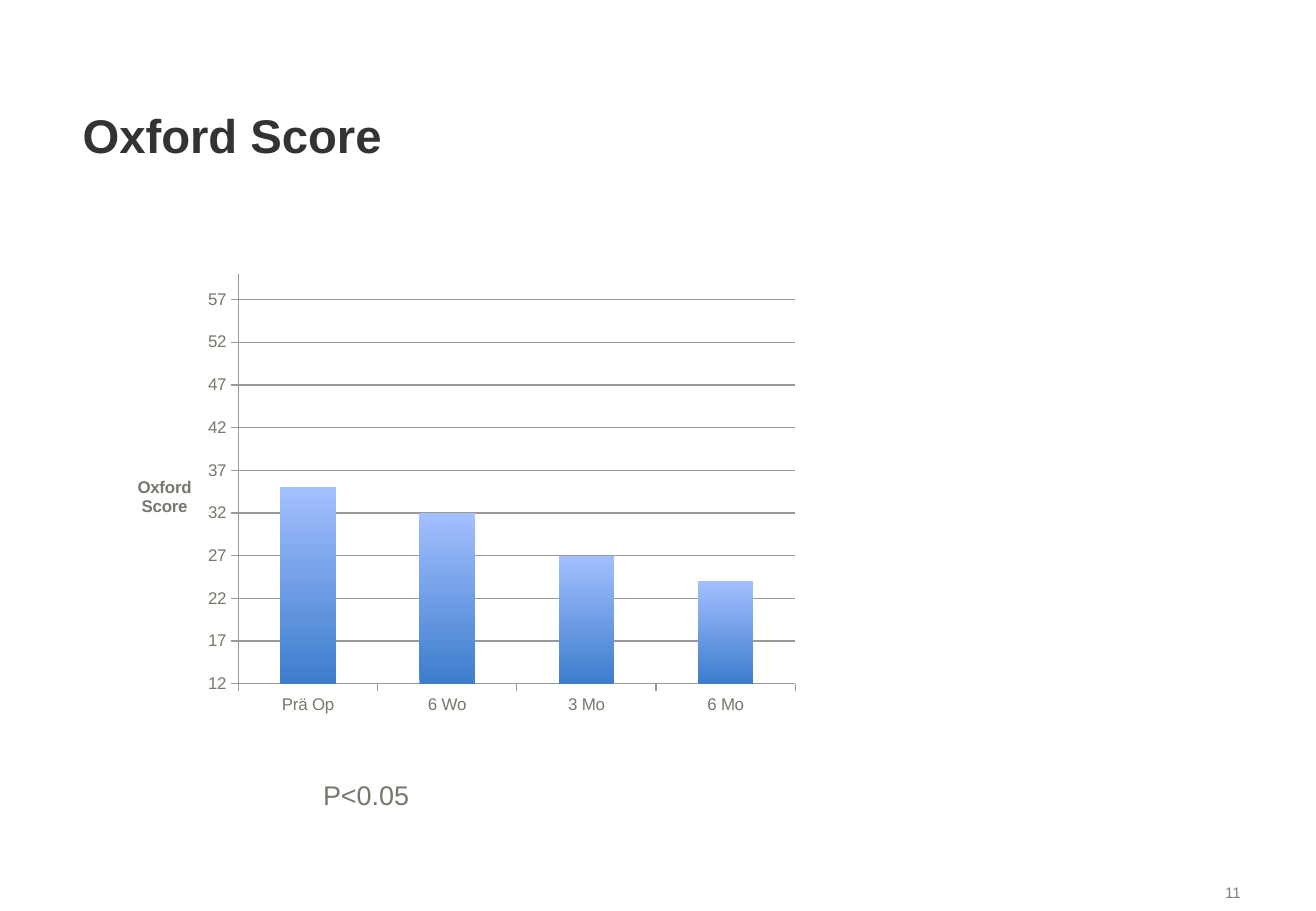
import dataclasses

import pptx
import pptx.chart.data
import pptx.dml.color
import pptx.enum.chart
import pptx.enum.text
import pptx.oxml
import pptx.oxml.ns
import pptx.util

Inches = pptx.util.Inches
Pt = pptx.util.Pt
ALIGN = pptx.enum.text.PP_ALIGN
ANCHOR = pptx.enum.text.MSO_ANCHOR


@dataclasses.dataclass(frozen=True)
class Theme:
    font: str = "Arial"
    heading: str = "333333"
    body: str = "75786A"
    number: str = "808080"
    line: str = "999999"
    bar_bottom: str = "3D7DCD"
    bar_top: str = "A3BFFF"
    title_size: int = 28
    note_size: int = 16
    chart_size: int = 10
    number_size: int = 9


THEME = Theme()


def rgb(value):
    return pptx.dml.color.RGBColor.from_string(value)


def style_font(font, size, color, bold=False):
    font.name = THEME.font
    font.size = Pt(size)
    font.bold = bold
    font.color.rgb = rgb(color)


def write_text(frame, text, *, size, color, bold=False, align=ALIGN.LEFT,
               anchor=ANCHOR.TOP, wrap=True):
    frame.word_wrap = wrap
    frame.vertical_anchor = anchor
    para = frame.paragraphs[0]
    para.alignment = align
    span = para.add_run()
    span.text = text
    style_font(span.font, size, color, bold)


def place(shape, left, top, width, height):
    shape.left, shape.top = Inches(left), Inches(top)
    shape.width, shape.height = Inches(width), Inches(height)


def add_text(page, text, area, **style):
    box = page.shapes.add_textbox(*map(Inches, area))
    write_text(box.text_frame, text, **style)
    return box


def set_layout(parent, position, target=None, **fractions):
    """Place a chart part by fractions of the chart area."""
    for old in parent.findall(pptx.oxml.ns.qn("c:layout")):
        parent.remove(old)
    inner = f'<c:layoutTarget val="{target}"/>' if target else ""
    inner += '<c:xMode val="edge"/><c:yMode val="edge"/>'
    inner += "".join(f'<c:{key} val="{value}"/>' for key, value in fractions.items())
    parent.insert(position, pptx.oxml.parse_xml(
        f'<c:layout {pptx.oxml.ns.nsdecls("c")}>'
        f"<c:manualLayout>{inner}</c:manualLayout></c:layout>"))


def style_axis(axis):
    axis.major_tick_mark = pptx.enum.chart.XL_TICK_MARK.OUTSIDE
    axis.minor_tick_mark = pptx.enum.chart.XL_TICK_MARK.NONE
    axis.format.line.color.rgb = rgb(THEME.line)
    axis.format.line.width = Pt(0.75)
    style_font(axis.tick_labels.font, THEME.chart_size, THEME.body)


def add_axis_title(axis, text):
    frame = axis.axis_title.text_frame
    frame.text = text
    for para in frame.paragraphs:
        para.alignment = ALIGN.CENTER
        for span in para.runs:
            style_font(span.font, THEME.chart_size, THEME.body, bold=True)
    title = axis.axis_title.element
    body = title.xpath(".//a:bodyPr")[0]
    body.set("rot", "0")
    body.set("vert", "horz")
    set_layout(title, 1, x=0.03, y=0.45)


def add_score_chart(page, area):
    scores = pptx.chart.data.CategoryChartData()
    scores.categories = ["Prä Op", "6 Wo", "3 Mo", "6 Mo"]
    scores.add_series("Series 1", [35, 32, 27, 24])
    chart = page.shapes.add_chart(
        pptx.enum.chart.XL_CHART_TYPE.COLUMN_CLUSTERED,
        *map(Inches, area), scores).chart
    chart.has_title = False
    chart.has_legend = False
    style_font(chart.font, THEME.chart_size, THEME.body)

    # Axes
    style_axis(chart.category_axis)
    values = chart.value_axis
    style_axis(values)
    values.minimum_scale, values.maximum_scale, values.major_unit = 12, 60, 5
    values.has_major_gridlines = True
    grid = values.major_gridlines.format.line
    grid.color.rgb = rgb(THEME.line)
    grid.width = Pt(0.75)
    add_axis_title(values, "Oxford\nScore")

    # Columns, shaded from bottom to top
    plot = chart.plots[0]
    plot.gap_width = 150
    plot.vary_by_categories = False
    fill = plot.series[0].format.fill
    fill.gradient()
    fill.gradient_angle = 90
    for stop, color in zip(fill.gradient_stops, (THEME.bar_bottom, THEME.bar_top)):
        stop.color.rgb = rgb(color)
    set_layout(chart.element.xpath(".//c:plotArea")[0], 0, "inner",
               x=0.18, y=0.02, w=0.8, h=0.89)


def main():
    deck = pptx.Presentation()
    deck.slide_width, deck.slide_height = Inches(10.83), Inches(7.5)
    page = deck.slides.add_slide(deck.slide_layouts[5])

    # Title
    title = page.shapes.title
    place(title, 0.58, 0.75, 6.42, 0.71)
    write_text(title.text_frame, "Oxford Score", size=THEME.title_size,
               color=THEME.heading, bold=True, anchor=ANCHOR.MIDDLE)

    # Page number
    add_text(page, "11", (8.41, 7.22, 1.9, 0.52), size=THEME.number_size,
             color=THEME.number, align=ALIGN.RIGHT)

    # Chart and significance
    add_score_chart(page, (0.93, 2.18, 5.73, 3.79))
    note = add_text(page, "P<0.05", (2.56, 6.36, 0.92, 0.37),
                    size=THEME.note_size, color=THEME.body, wrap=False)
    note.text_frame.auto_size = pptx.enum.text.MSO_AUTO_SIZE.SHAPE_TO_FIT_TEXT

    deck.save("out.pptx")


if __name__ == "__main__":
    main()
